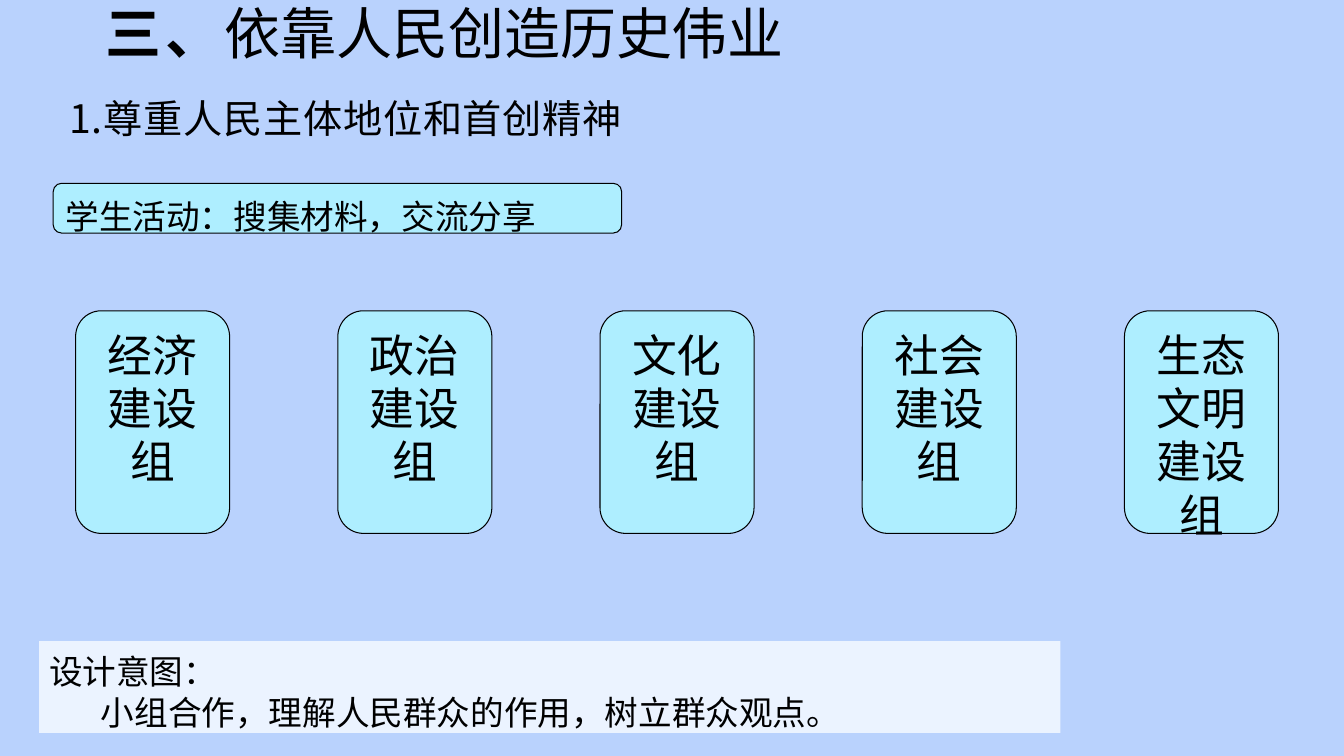
"""Build a lesson slide with a title, a class activity, five groups and the design intent."""
import pptx
import pptx.dml.color
import pptx.enum.shapes
import pptx.enum.text
import pptx.oxml
import pptx.oxml.ns
import pptx.util

Pt = pptx.util.Pt
RGBColor = pptx.dml.color.RGBColor
Shape = pptx.enum.shapes.MSO_SHAPE
Align = pptx.enum.text.PP_ALIGN

BACKGROUND = RGBColor(0xB9, 0xD2, 0xFD)
INTENT_FILL = RGBColor(0xEB, 0xF3, 0xFF)
CARD_FILL = RGBColor(0xAE, 0xEE, 0xFF)
BLACK = RGBColor(0, 0, 0)


class LessonPage:
    font_name = "Noto Sans CJK SC"
    line_ratio = 1.2

    def __init__(self, deck):
        self.page = deck.slides.add_slide(deck.slide_layouts[5])
        fill = self.page.background.fill
        fill.solid()
        fill.fore_color.rgb = BACKGROUND

    def set_text(self, box, lines, size, align=Align.LEFT, spacing=0):
        frame = box.text_frame
        frame.text = "\n".join(lines)
        frame.word_wrap = True
        frame.auto_size = pptx.enum.text.MSO_AUTO_SIZE.NONE
        frame.vertical_anchor = pptx.enum.text.MSO_ANCHOR.TOP
        frame.margin_left = frame.margin_right = Pt(7.2)
        frame.margin_top, frame.margin_bottom = Pt(7), Pt(0)
        for para in frame.paragraphs:
            para.alignment = align
            para.line_spacing = Pt(round(size * self.line_ratio))
            para.space_before = Pt(0)
            for span in para.runs:
                self.style(span, size, spacing)
        return frame

    def style(self, span, size, spacing=0, bold=False):
        span.font.name = self.font_name
        span.font.size = Pt(size)
        span.font.bold = bold
        span.font.color.rgb = BLACK
        properties = span._r.get_or_add_rPr()
        properties.set("spc", str(round(spacing * 100)))
        east_asian = pptx.oxml.parse_xml(
            f'<a:ea {pptx.oxml.ns.nsdecls("a")} typeface="{self.font_name}"/>')
        properties.find(pptx.oxml.ns.qn("a:latin")).addnext(east_asian)

    def title(self, number, words, left, top, width, height):
        box = self.page.shapes.title
        box.left, box.top, box.width, box.height = map(Pt, (left, top, width, height))
        para = self.set_text(box, [""], 40).paragraphs[0]
        for text, spacing, bold in ((number, 2.4, True), (words, 0, False)):
            span = para.add_run()
            span.text = text
            self.style(span, 40, spacing, bold)

    def heading(self, text, left, top, width, height):
        box = self.page.shapes.add_textbox(*map(Pt, (left, top, width, height)))
        self.set_text(box, [text], 28, spacing=0.6)

    def panel(self, kind, lines, size, left, top, width, height,
              fill=CARD_FILL, outlined=True, align=Align.LEFT):
        box = self.page.shapes.add_shape(kind, *map(Pt, (left, top, width, height)))
        box.shadow.inherit = False
        box.fill.solid()
        box.fill.fore_color.rgb = fill
        if outlined:
            box.line.color.rgb = BLACK
            box.line.width = Pt(0.75)
        else:
            box.line.fill.background()
        return self.set_text(box, lines, size, align)


def main():
    deck = pptx.Presentation()
    deck.slide_width, deck.slide_height = Pt(960), Pt(540)
    lesson = LessonPage(deck)
    lesson.title("三、", "依靠人民创造历史伟业", 68.4, -8, 808, 55.4)

    intent = lesson.panel(
        Shape.RECTANGLE, ["设计意图：", "小组合作，理解人民群众的作用，树立群众观点。"],
        24, 28, 458, 729.5, 65.5, fill=INTENT_FILL, outlined=False)
    intent.paragraphs[1]._p.get_or_add_pPr().set("indent", str(Pt(37)))

    lesson.heading("1.尊重人民主体地位和首创精神", 42.5, 60, 908.5, 51)
    lesson.panel(Shape.FLOWCHART_ALTERNATE_PROCESS, ["学生活动：搜集材料，交流分享"],
                 24, 38, 131, 406, 35.5)

    for index, topic in enumerate(("经济", "政治", "文化", "社会", "生态文明")):
        lesson.panel(Shape.ROUNDED_RECTANGLE, [topic, "建设组"], 32,
                     54 + 187.3 * index, 222, 110, 159, align=Align.CENTER)

    deck.save("out.pptx")


if __name__ == "__main__":
    main()
